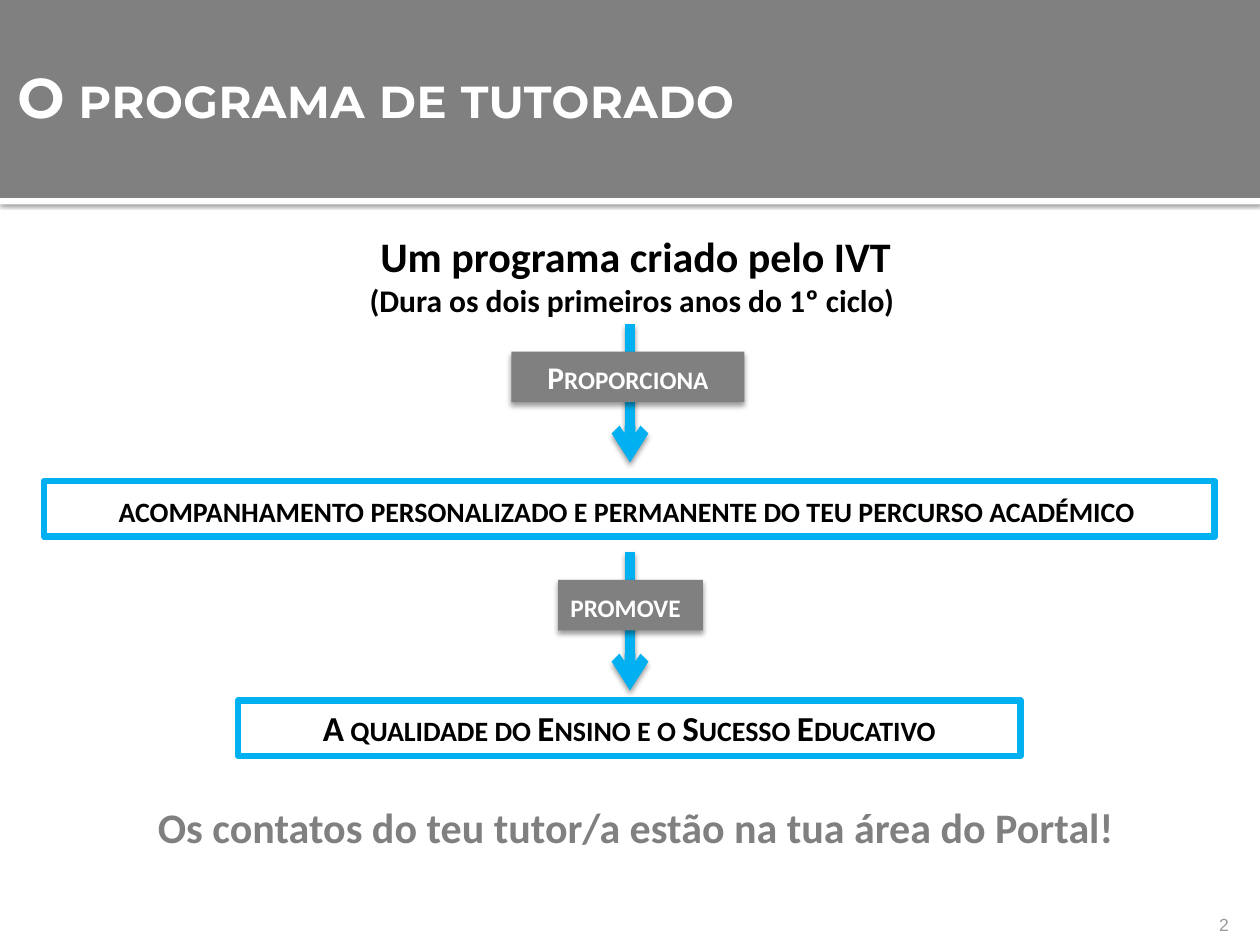
from dataclasses import dataclass
from typing import Optional

from lxml.etree import SubElement
from pptx import Presentation
from pptx.dml.color import RGBColor
from pptx.enum.shapes import MSO_CONNECTOR, MSO_SHAPE
from pptx.enum.text import MSO_ANCHOR, MSO_AUTO_SIZE, PP_ALIGN
from pptx.oxml.ns import qn
from pptx.util import Cm, Pt

COLORS = {"gray": "808080", "blue": "00B0F0", "white": "FFFFFF",
          "black": "000000", "number": "9B9A98"}
WIDTH, HEIGHT = 25.4, 19.05
STEP = 4.6  # from one arrow to the next
ARROW_TOP, ARROW_LENGTH = 6.53, 2.79


@dataclass(frozen=True)
class Shadow:
    opacity: int
    blur: float
    distance: float


SOFT = Shadow(38, 3.1, 2)
STRIP = Shadow(60, 2.5, 0.8)


@dataclass(frozen=True)
class Block:
    """A text box, or a rectangle when it has a fill; sizes go with lines."""
    left: float
    top: float
    width: float
    height: float
    lines: tuple[str, ...] = ()
    sizes: tuple[int, ...] = ()
    color: str = "black"
    fill: Optional[str] = None
    border: Optional[str] = None
    shadow: Optional[Shadow] = None
    font: str = "Calibri"
    bold: bool = True
    small_caps: bool = False
    spacing: int = 0
    align: PP_ALIGN = PP_ALIGN.CENTER
    anchor: MSO_ANCHOR = MSO_ANCHOR.TOP
    margins: tuple[float, ...] = (0.25, 0.13, 0.25, 0.13)
    wrap: bool = True
    grow: bool = True


def rgb(name: str) -> RGBColor:
    return RGBColor.from_string(COLORS[name])


def set_shadow(s, shadow: Optional[Shadow]) -> None:
    """Replace the theme shadow by the given one, or by none."""
    effects = SubElement(s._element.spPr, qn("a:effectLst"))
    if shadow:
        outer = SubElement(effects, qn("a:outerShdw"), blurRad=str(Pt(shadow.blur)),
                           dist=str(Pt(shadow.distance)), dir="5400000", rotWithShape="0")
        color = SubElement(outer, qn("a:srgbClr"), val=COLORS["black"])
        SubElement(color, qn("a:alpha"), val=str(shadow.opacity * 1000))


def write_text(tf, block: Block) -> None:
    frame = {"word_wrap": block.wrap, "vertical_anchor": block.anchor,
             "auto_size": MSO_AUTO_SIZE.SHAPE_TO_FIT_TEXT if block.grow else MSO_AUTO_SIZE.NONE}
    for side, margin in zip(("left", "top", "right", "bottom"), block.margins):
        frame[f"margin_{side}"] = Cm(margin)
    for name, value in frame.items():
        setattr(tf, name, value)
    for i, (text, size) in enumerate(zip(block.lines, block.sizes)):
        p = tf.add_paragraph() if i else tf.paragraphs[0]
        p.alignment = block.align
        r = p.add_run()
        r.text = text
        for name, value in {"name": block.font, "size": Pt(size), "bold": block.bold}.items():
            setattr(r.font, name, value)
        r.font.color.rgb = rgb(block.color)
        if block.small_caps:
            r.font._element.set("cap", "small")
        if block.spacing:
            r.font._element.set("spc", str(block.spacing))


def draw_block(slide, block: Block) -> None:
    box = [Cm(v) for v in (block.left, block.top, block.width, block.height)]
    if block.fill:
        s = slide.shapes.add_shape(MSO_SHAPE.RECTANGLE, *box)
        s.fill.solid()
        s.fill.fore_color.rgb = rgb(block.fill)
        if block.border:
            s.line.color.rgb = rgb(block.border)
            s.line.width = Pt(3.78)
        else:
            s.line.fill.background()
        set_shadow(s, block.shadow)
    else:
        s = slide.shapes.add_textbox(*box)
    if block.lines:
        write_text(s.text_frame, block)


def draw_arrow(slide, top: float) -> None:
    x = Cm(WIDTH / 2)
    s = slide.shapes.add_connector(MSO_CONNECTOR.STRAIGHT, x, Cm(top),
                                   x, Cm(top + ARROW_LENGTH))
    s.line.color.rgb = rgb("blue")
    s.line.width = Pt(6)
    SubElement(s._element.spPr.find(qn("a:ln")), qn("a:tailEnd"), type="arrow")
    set_shadow(s, SOFT)


def main() -> None:
    prs = Presentation()
    prs.slide_width, prs.slide_height = Cm(WIDTH), Cm(HEIGHT)
    slide = prs.slides.add_slide(prs.slide_layouts[6])

    outlined = {"sizes": (20,), "fill": "white", "border": "blue", "small_caps": True}
    label = {"sizes": (18,), "color": "white", "fill": "gray", "shadow": SOFT,
             "small_caps": True}
    header = (
        Block(0, 3.99, WIDTH, 0.13, fill="white", shadow=STRIP),
        Block(0, 0, WIDTH, 3.99, fill="gray"),
        Block(0.1, 0.74, 19.2, 2.41, ("O programa de tutorado",), (32,), "white",
              font="Montserrat", small_caps=True, spacing=40, align=PP_ALIGN.LEFT,
              anchor=MSO_ANCHOR.MIDDLE, margins=(0.25, 0.13, 0.13, 0.13), grow=False),
    )
    body = (
        Block(0.51, 4.52, 24.61, 2.82,
              ("Um programa criado pelo IVT", "(Dura os dois primeiros anos do 1º ciclo) "),
              (24, 18)),
        Block(10.31, 7.09, 4.7, 1.02, ("Proporciona",), **label),
        Block(0.89, 9.7, 23.6, 1.12,
              ("acompanhamento personalizado e permanente do teu percurso académico ",),
              **outlined),
        Block(11.25, 7.09 + STEP, 2.92, 1.02, ("promove",), wrap=False,
              align=PP_ALIGN.LEFT, **label),
        Block(4.8, 14.12, 15.77, 1.12,
              ("A qualidade do Ensino e o Sucesso Educativo",), **outlined),
        Block(0.51, 16.03, 24.61, 1.27,
              ("Os contatos do teu tutor/a estão na tua área do Portal!",), (24,), "gray"),
        Block(22.66, 17.83, 2.11, 1.02, ("2",), (10,), "number", font="Arial",
              bold=False, align=PP_ALIGN.RIGHT, anchor=MSO_ANCHOR.BOTTOM,
              margins=(0, 0, 0, 0), grow=False),
    )
    for block in header:
        draw_block(slide, block)
    for i in range(2):
        draw_arrow(slide, ARROW_TOP + i * STEP)
    for block in body:
        draw_block(slide, block)
    prs.save("out.pptx")


if __name__ == "__main__":
    main()
